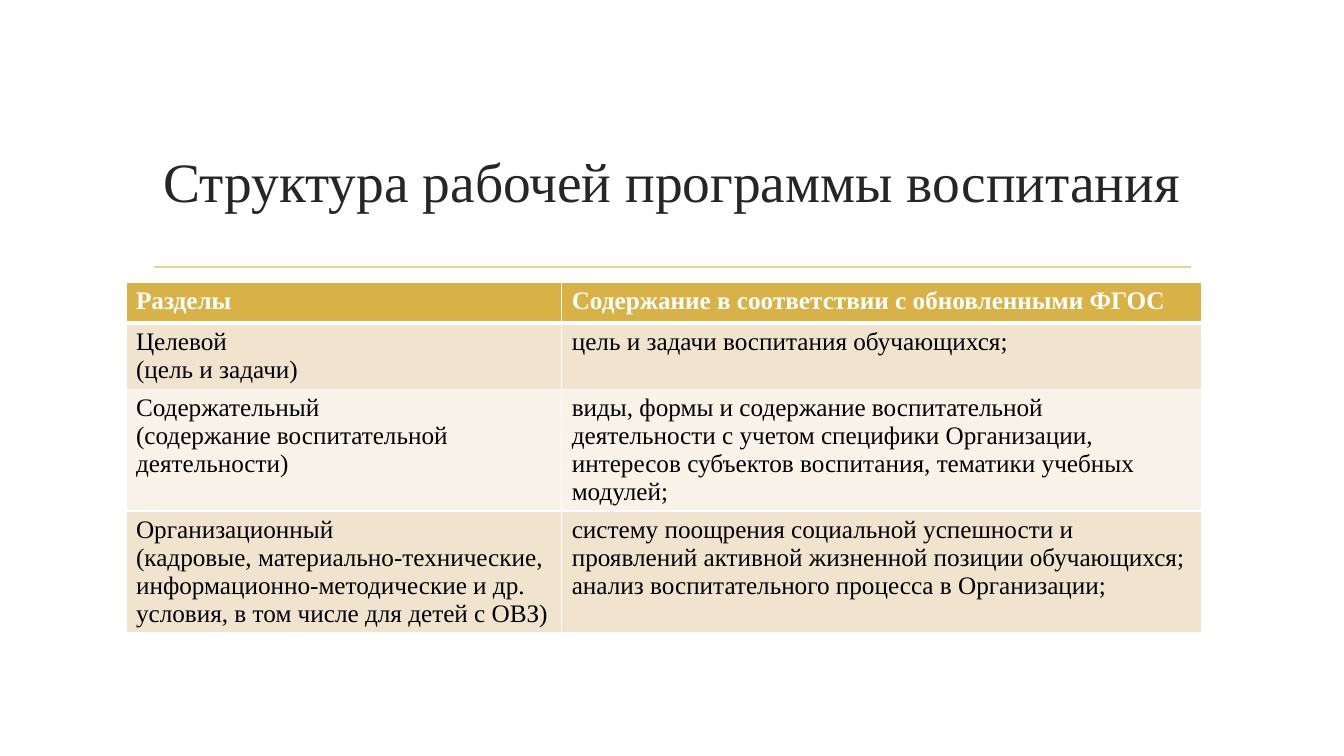
from lxml import etree
from pptx import Presentation
from pptx import util as u
from pptx.dml.color import RGBColor
from pptx.enum import shapes, text
from pptx.oxml.ns import qn

EMU_PER_PX = 9525
HEADER_FILL = "D9B247"
BAND_FILLS = ("F1E4CF", "F8F2E9")
BORDER = "FFFFFF"

SECTIONS = [
    ("Разделы", "Содержание в соответствии с обновленными ФГОС"),
    ("Целевой\n(цель и задачи)", "цель и задачи воспитания обучающихся;"),
    ("Содержательный\n(содержание воспитательной деятельности)",
     "виды, формы и содержание воспитательной деятельности с учетом специфики "
     "Организации, интересов субъектов воспитания, тематики учебных модулей;"),
    ("Организационный\n(кадровые, материально-технические, "
     "информационно-методические и др. условия, в том числе для детей с ОВЗ)",
     "систему поощрения социальной успешности и проявлений активной жизненной "
     "позиции обучающихся;\nанализ воспитательного процесса в Организации;"),
]


def px(*lengths):
    return [u.Emu(length * EMU_PER_PX) for length in lengths]


def color(hex_string):
    return RGBColor.from_string(hex_string)


class SlideBuilder:
    font_name = "Times New Roman"

    def __init__(self, slide):
        self.slide = slide

    def style(self, paragraph, size, hex_string, bold=False):
        font = paragraph.font
        font.name, font.size, font.bold = self.font_name, u.Pt(size), bold
        font.color.rgb = color(hex_string)

    def title(self, wording, box, size, hex_string):
        shape = self.slide.shapes.title
        shape.left, shape.top, shape.width, shape.height = px(*box)
        frame = shape.text_frame
        frame.text = wording
        frame.word_wrap = True
        frame.auto_size = text.MSO_AUTO_SIZE.NONE
        frame.vertical_anchor = text.MSO_ANCHOR.MIDDLE
        paragraph = frame.paragraphs[0]
        paragraph.alignment = text.PP_ALIGN.CENTER
        self.style(paragraph, size, hex_string)

    def rule(self, left, right, y, hex_string, width):
        line = self.slide.shapes.add_connector(
            shapes.MSO_CONNECTOR.STRAIGHT, *px(left, y, right, y))
        line.line.color.rgb = color(hex_string)
        line.line.width = u.Pt(width)
        etree.SubElement(line._element.spPr, qn("a:effectLst"))

    def borders(self, cell, top, bottom):
        properties = cell._tc.get_or_add_tcPr()
        for side, width in (("L", 1), ("R", 1), ("T", top), ("B", bottom)):
            line = etree.SubElement(properties, qn(f"a:ln{side}"), w=str(u.Pt(width)))
            fill = etree.SubElement(line, qn("a:solidFill"))
            etree.SubElement(fill, qn("a:srgbClr"), val=BORDER)

    def table(self, rows, left, top, widths, heights, size):
        frame = self.slide.shapes.add_table(
            len(rows), len(widths), *px(left, top, sum(widths), sum(heights)))
        table = frame.table
        for column, width in zip(table.columns, px(*widths)):
            column.width = width
        for row, height in zip(table.rows, px(*heights)):
            row.height = height
        for r, row in enumerate(rows):
            header = r == 0
            fill = HEADER_FILL if header else BAND_FILLS[(r - 1) % 2]
            for c, wording in enumerate(row):
                cell = table.cell(r, c)
                cell.text = wording
                # The heavy border lies between the header and the first row
                self.borders(cell, 3 if r == 1 else 1, 3 if header else 1)
                cell.fill.solid()
                cell.fill.fore_color.rgb = color(fill)
                for paragraph in cell.text_frame.paragraphs:
                    self.style(paragraph, size, "FFFFFF" if header else "000000", header)


def main():
    presentation = Presentation()
    presentation.slide_width, presentation.slide_height = px(1280, 720)
    title_only = presentation.slide_layouts[5]
    builder = SlideBuilder(presentation.slides.add_slide(title_only))

    # Heading and its rule
    builder.title("Структура рабочей программы воспитания",
                  (136, 103, 1008, 137), 39.6, "262626")
    builder.rule(147, 1134, 254, "E8D191", 1.25)

    # Programme sections
    builder.table(SECTIONS, 120, 269, (415, 609), (39, 62, 116, 116), 18)

    presentation.save("out.pptx")


if __name__ == "__main__":
    main()
